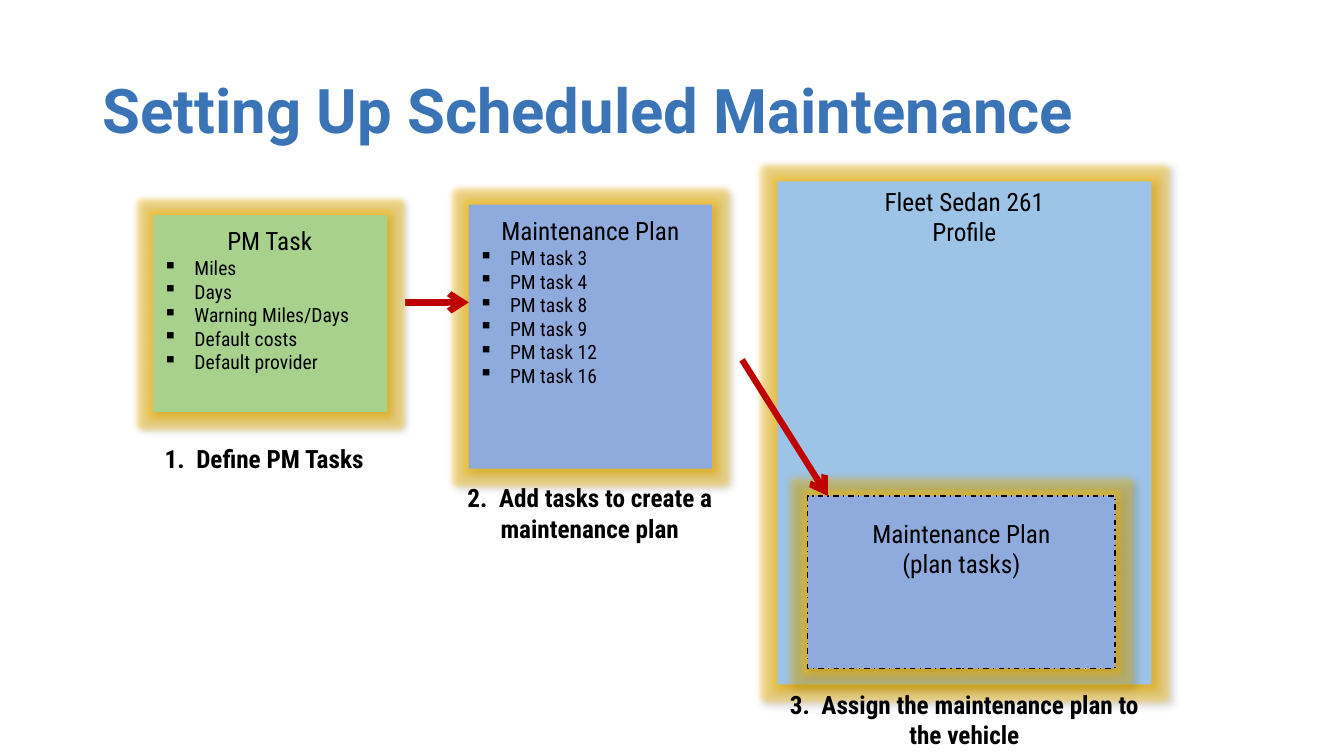
from pptx import Presentation
from pptx.dml.color import RGBColor
from pptx.enum.dml import MSO_LINE as Dash
from pptx.enum.shapes import MSO_CONNECTOR as Link, MSO_SHAPE as Shape
from pptx.enum.text import MSO_ANCHOR as Anchor, PP_ALIGN as Align
from pptx.oxml import parse_xml
from pptx.oxml.ns import nsdecls
from pptx.util import Inches, Pt

BLUE = RGBColor(0x3A, 0x74, 0xB7)
BLACK = RGBColor(0, 0, 0)
GREEN = RGBColor(0xA9, 0xD1, 0x8E)
PLAN = RGBColor(0x8F, 0xAA, 0xDC)
SKY = RGBColor(0x9D, 0xC3, 0xE6)
RED = RGBColor(0xC0, 0, 0)
BODY = "Roboto Condensed"
INDENT = 0.31


def xml(tag, inner=""):
    head, *rest = tag.split(" ", 1)
    return parse_xml(f'<a:{head} {nsdecls("a")} {"".join(rest)}>{inner}</a:{head}>')


def write(frame, text, size=18, color=BLACK, font=BODY, bold=False,
          align=Align.CENTER, bullet=False, space=1.0):
    """Add one paragraph, using the first one while it is empty."""
    para = frame.paragraphs[0]
    if para.runs:
        para = frame.add_paragraph()
    para.alignment = align
    para.line_spacing = space
    if bullet:
        props = para._p.get_or_add_pPr()
        props.set("marL", str(Inches(INDENT)))
        props.set("indent", str(-Inches(INDENT)))
        props.append(xml('buChar char="▪"'))
    run = para.add_run()
    run.text = text
    run.font.size = Pt(size)
    run.font.name = font
    run.font.bold = bold
    run.font.color.rgb = color


def label(slide, text, x, y, w, h, anchor=Anchor.TOP, **style):
    box = slide.shapes.add_textbox(Inches(x), Inches(y), Inches(w), Inches(h))
    frame = box.text_frame
    frame.word_wrap = True
    frame.vertical_anchor = anchor
    write(frame, text, **style)


def panel(slide, x, y, w, h, fill, heads, items=(), top=0.05, edge=None, dash=None):
    """Draw a glowing box with centred heads above a bullet list."""
    box = slide.shapes.add_shape(Shape.RECTANGLE, Inches(x), Inches(y), Inches(w), Inches(h))
    box.fill.solid()
    box.fill.fore_color.rgb = fill
    if edge is None:
        box.line.fill.background()
    else:
        box.line.color.rgb = edge
        box.line.width = Pt(1)
        box.line.dash_style = dash
    # Gold glow and soft shadow
    box.shadow.inherit = False
    effects = box._element.spPr.find(xml("effectLst").tag)
    effects.append(xml(f'glow rad="{Pt(8)}"',
                       '<a:srgbClr val="FFC000"><a:alpha val="40000"/></a:srgbClr>'))
    effects.append(xml(f'outerShdw blurRad="{Pt(4)}" dist="{Pt(3)}" dir="2700000" '
                       'algn="tl" rotWithShape="0"',
                       '<a:srgbClr val="000000"><a:alpha val="40000"/></a:srgbClr>'))
    # Text
    frame = box.text_frame
    frame.word_wrap = True
    frame.vertical_anchor = Anchor.TOP
    frame.margin_top = Inches(top)
    for head in heads:
        write(frame, head)
    for item in items:
        write(frame, item, size=14, align=Align.LEFT, bullet=True)


def arrow(slide, x1, y1, x2, y2):
    line = slide.shapes.add_connector(Link.STRAIGHT, Inches(x1), Inches(y1),
                                      Inches(x2), Inches(y2))
    line.line.color.rgb = RED
    line.line.width = Pt(4.5)
    line.line._get_or_add_ln().append(xml('tailEnd type="arrow"'))
    line._element.spPr.append(xml("effectLst"))


def step_task(slide, x, y, w, h):
    items = ["Miles", "Days", "Warning Miles/Days", "Default costs", "Default provider"]
    panel(slide, x, y, w, h, GREEN, ["PM Task"], items, top=0.1, edge=GREEN)
    label(slide, "1.  Define PM Tasks", x - 0.22, y + h + 0.27, w + 0.33, 0.4, bold=True)


def step_plan(slide, x, y, w, h):
    items = [f"PM task {num}" for num in (3, 4, 8, 9, 12, 16)]
    panel(slide, x, y, w, h, PLAN, ["Maintenance Plan"], items, top=0.11)
    arrow(slide, x - 0.63, y + 0.97, x, y + 0.97)
    label(slide, "2.  Add tasks to create a maintenance plan",
          x - 0.3, y + h + 0.09, w + 0.59, 0.71, bold=True)


def step_car(slide, x, y, w, h):
    panel(slide, x, y, w, h, SKY, ["Fleet Sedan 261", "Profile"])
    panel(slide, x + 0.3, y + 3.12, w - 0.66, 1.71, PLAN,
          ["Maintenance Plan", "(plan tasks)"], top=0.22, edge=BLACK, dash=Dash.DASH_DOT)
    arrow(slide, x - 0.35, y + 1.77, x + 0.5, y + 3.12)
    label(slide, "3.  Assign the maintenance plan to the vehicle",
          x, y + h, w, 0.71, bold=True)


def main():
    deck = Presentation()
    deck.slide_width, deck.slide_height = Inches(13.33), Inches(7.5)
    slide = deck.slides.add_slide(deck.slide_layouts[6])
    label(slide, "Setting Up Scheduled Maintenance", 0.92, 0.4, 11.5, 1.45,
          anchor=Anchor.MIDDLE, size=44, color=BLUE, font="Roboto", bold=True,
          align=Align.LEFT, space=0.9)
    step_plan(slide, 4.65, 2.03, 2.41, 2.62)
    step_car(slide, 7.71, 1.8, 3.71, 4.99)
    step_task(slide, 1.52, 2.14, 2.31, 1.94)
    deck.save("out.pptx")


if __name__ == "__main__":
    main()
